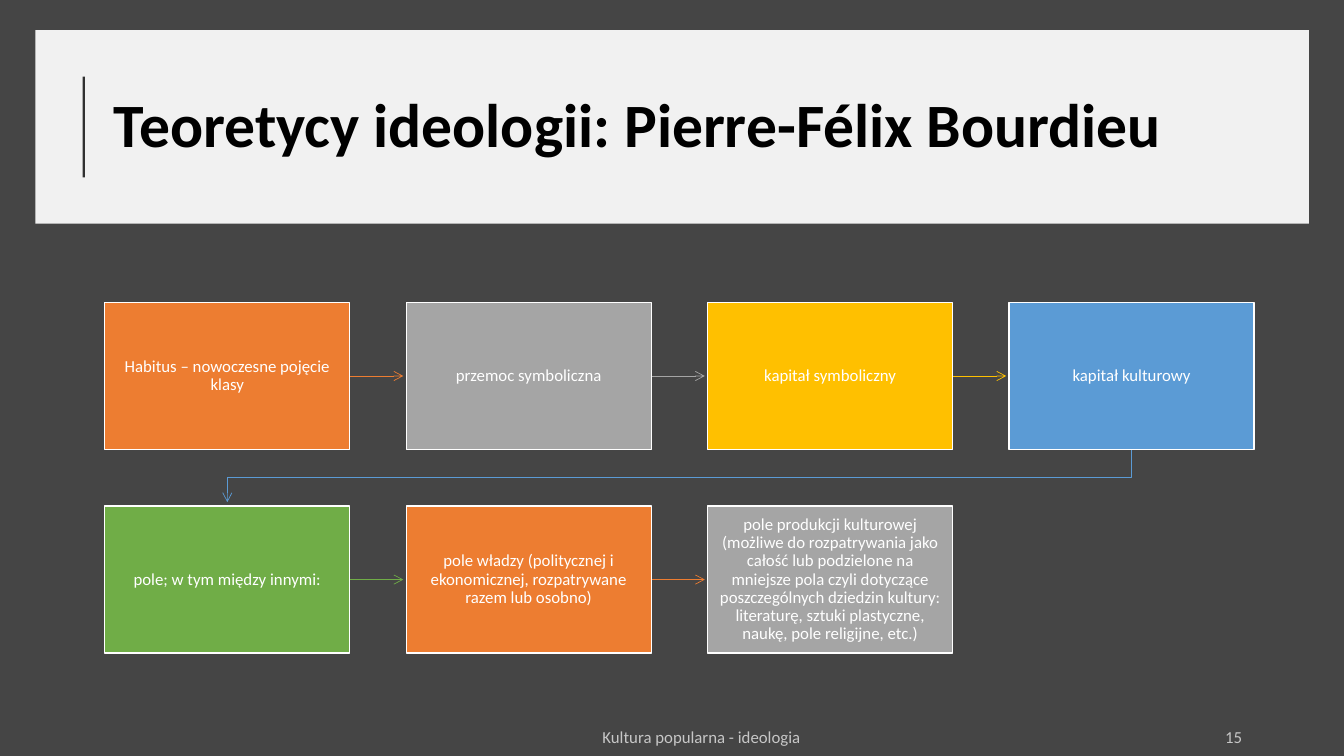
from pptx import Presentation
from pptx.dml.color import RGBColor
from pptx.enum.shapes import MSO_CONNECTOR as Link, MSO_SHAPE as Form
from pptx.enum.text import MSO_ANCHOR as Anchor, MSO_AUTO_SIZE as Auto, PP_ALIGN as Align
from pptx.oxml.ns import qn
from pptx.util import Inches, Pt
from lxml.etree import SubElement as Sub

FONT, WHITE, BLACK = "Calibri", "FFFFFF", "000000"
ORANGE, GREY, GOLD, BLUE, GREEN = "ED7D31", "A5A5A5", "FFC000", "5B9BD5", "70AD47"

COLS = 4
LEFT, TOP = 7.8, 40
WIDE, HIGH = 18.23, 19.47
STEP_X, STEP_Y = 22.43, 26.93
GAP_X, GAP_Y = 0.22, 0.5  # space between an arrow tip and its box

NODES = [
    ("Habitus – nowoczesne pojęcie klasy", ORANGE),
    ("przemoc symboliczna", GREY),
    ("kapitał symboliczny", GOLD),
    ("kapitał kulturowy", BLUE),
    ("pole; w tym między innymi:", GREEN),
    ("pole władzy (politycznej i ekonomicznej, rozpatrywane razem lub osobno)", ORANGE),
    ("pole produkcji kulturowej (możliwe do rozpatrywania jako całość lub "
     "podzielone na mniejsze pola czyli dotyczące poszczególnych dziedzin kultury: "
     "literaturę, sztuki plastyczne, naukę, pole religijne, etc.)", GREY),
]


def tint(code):
    return RGBColor.from_string(code)


def put(item, **values):
    for name, value in values.items():
        setattr(item, name, value)


def fade(shape, share):
    """Give every plain colour in the shape an opacity in percent."""
    for mark in list(shape.element.iter(qn("a:srgbClr"))):
        Sub(mark, qn("a:alpha"), val=str(share * 1000))


class Deck:
    """Style and current slide; places are percent of the slide's size."""

    def __init__(self, back):
        self.file = Presentation()
        put(self.file, slide_width=Inches(13.33), slide_height=Inches(7.5))
        self.slide = self.file.slides.add_slide(self.file.slide_layouts[5])
        self.shapes = self.slide.shapes
        fill = self.slide.background.fill
        fill.solid()
        fill.fore_color.rgb = tint(back)

    def spot(self, x, y):
        return (round(self.file.slide_width * x / 100),
                round(self.file.slide_height * y / 100))

    def area(self, x, y, w, h):
        return self.spot(x, y) + self.spot(w, h)

    def text(self, shape, words, size=12, color=WHITE, bold=False,
             align=Align.CENTER, **frame):
        body = shape.text_frame
        put(body, text=words, word_wrap=True, auto_size=Auto.NONE,
            vertical_anchor=Anchor.MIDDLE, **frame)
        para = body.paragraphs[0]
        put(para, alignment=align, line_spacing=0.9)
        font = para.runs[0].font
        put(font, name=FONT, size=Pt(size), bold=bold)
        font.color.rgb = tint(color)

    def title(self, words, *area):
        shape = self.shapes.title
        put(shape, **dict(zip(("left", "top", "width", "height"), self.area(*area))))
        self.text(shape, words, 44, BLACK, True, Align.LEFT)

    def label(self, words, align, *area):
        shape = self.shapes.add_textbox(*self.area(*area))
        self.text(shape, words, align=align)
        fade(shape, 70)

    def box(self, color, *area):
        shape = self.shapes.add_shape(Form.RECTANGLE, *self.area(*area))
        shape.shadow.inherit = False
        shape.fill.solid()
        shape.fill.fore_color.rgb = tint(color)
        shape.line.fill.background()
        return shape

    def node(self, words, color, x, y):
        shape = self.box(color, x, y, WIDE, HIGH)
        self.ink(shape, WHITE, 1)
        side, edge = Inches(0.12), Inches(0.13)
        self.text(shape, words, margin_left=side, margin_right=side,
                  margin_top=edge, margin_bottom=edge)

    def ink(self, shape, color, width, tip=False):
        shape.line.color.rgb = tint(color)
        shape.line.width = Pt(width)
        if tip:
            Sub(shape.element.spPr.find(qn("a:ln")), qn("a:tailEnd"), type="arrow")

    def rule(self, color, width, start, end, tip=False):
        line = self.shapes.add_connector(
            Link.STRAIGHT, *self.spot(*start), *self.spot(*end))
        self.ink(line, color, width, tip)
        Sub(line.element.spPr, qn("a:effectLst"))
        return line

    def bend(self, color, *dots):
        """Draw an open arrow through several points."""
        first, *rest = [self.spot(*dot) for dot in dots]
        pen = self.shapes.build_freeform(*first)
        pen.add_line_segments(rest, close=False)
        track = pen.convert_to_shape()
        track.shadow.inherit = False
        track.fill.background()
        self.ink(track, color, 0.5, True)


def flow(deck):
    """Lay the nodes out in rows, each with an arrow to the next one."""
    for i, (words, color) in enumerate(NODES):
        row, col = divmod(i, COLS)
        x, y = LEFT + col * STEP_X, TOP + row * STEP_Y
        if i < len(NODES) - 1:
            if col < COLS - 1:
                mid = y + HIGH / 2
                deck.rule(color, 0.5, (x + WIDE, mid),
                          (x + STEP_X - GAP_X, mid), True)
            else:
                last, first = x + WIDE / 2, LEFT + WIDE / 2
                turn = y + (HIGH + STEP_Y) / 2
                deck.bend(color, (last, y + HIGH), (last, turn),
                          (first, turn), (first, y + STEP_Y - GAP_Y))
        deck.node(words, color, x, y)


def main():
    deck = Deck("454545")
    banner = deck.box(WHITE, 2.63, 4, 94.75, 25.6)
    fade(banner, 93)
    banner.element.addnext(deck.shapes.title.element)
    deck.title("Teoretycy ideologii: Pierre-Félix Bourdieu", 7.73, 7.07, 85.67, 19.6)
    fade(deck.rule(BLACK, 1.5, (6.23, 23.47), (6.23, 10.13)), 80)
    deck.label("Kultura popularna - ideologia", Align.CENTER, 37.2, 95.6, 30, 4)
    deck.label("15", Align.RIGHT, 70.67, 95.6, 22.5, 4)
    flow(deck)
    deck.file.save("out.pptx")


if __name__ == "__main__":
    main()
